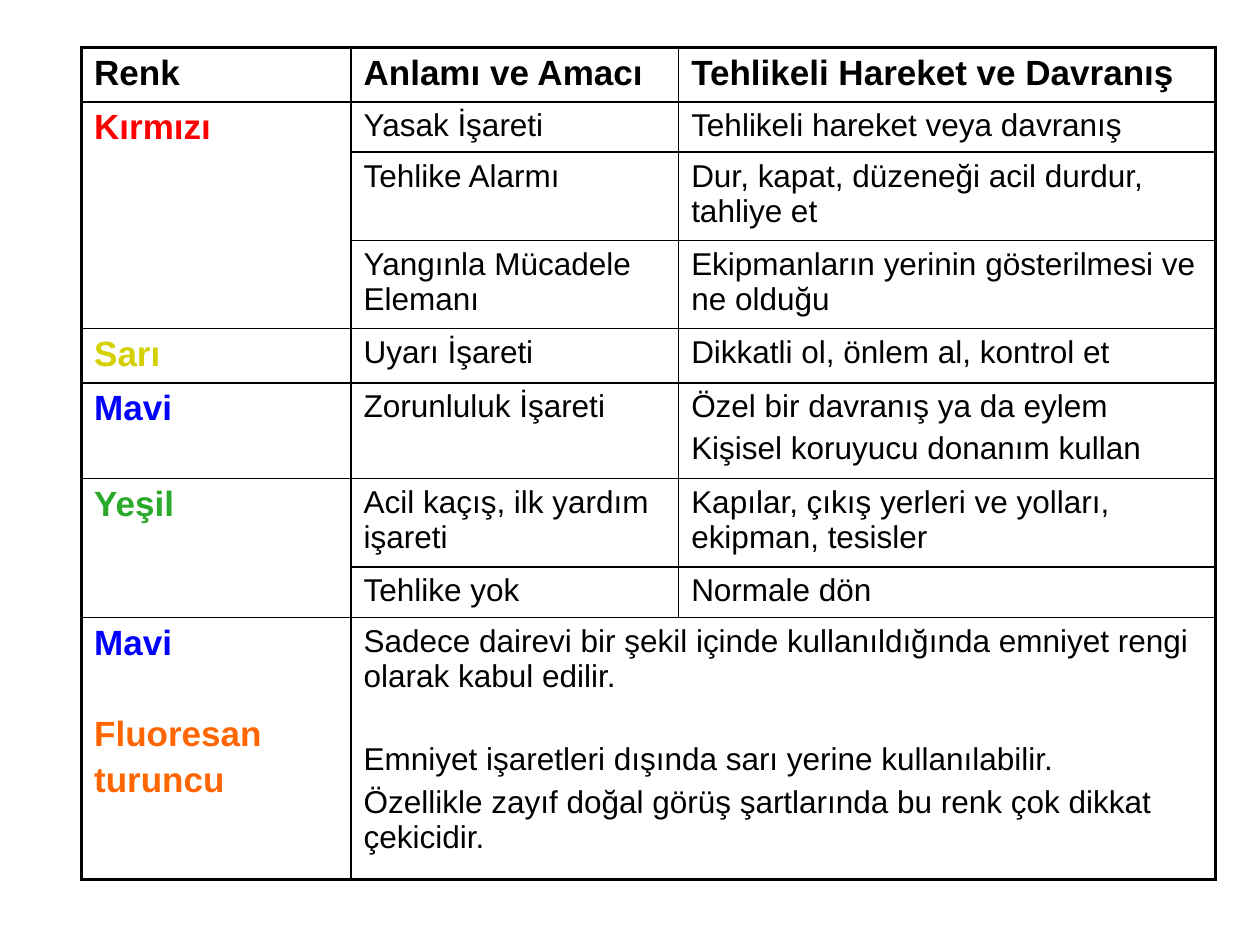
from dataclasses import dataclass

import lxml.etree
import pptx
import pptx.dml.color
import pptx.oxml.ns
import pptx.table
import pptx.util

Pt = pptx.util.Pt

BLACK, RED, YELLOW = "000000", "FF0000", "D5D000"
BLUE, GREEN, ORANGE = "0000FF", "2AAA2A", "FF6600"
HEADING = {"size": Pt(20), "bold": True, "name": "Arial"}
BODY = {"size": Pt(18), "bold": False, "name": "Arial"}
CELL_FORMAT = {
    "margin_left": Pt(7.2),
    "margin_right": Pt(7.2),
    "margin_top": Pt(3.6),
    "margin_bottom": Pt(3.6),
}
COLUMN_WIDTHS = [154, 187.25, 306.75]
ROW_HEIGHTS = [31, 28.8, 50.4, 50.4, 31, 54.8, 50.4, 28.8, 149.8]
OUTER_WIDTH, INNER_WIDTH = 2.25, 1


@dataclass
class Line:
    text: str
    color: str = BLACK
    space_before: float = 4


@dataclass
class Entry:
    row: int
    column: int
    lines: list[Line]
    row_span: int = 1
    column_span: int = 1


def body_entries(row: int, meaning: str, *actions: str) -> list[Entry]:
    return [
        Entry(row, 1, [Line(meaning)]),
        Entry(row, 2, [Line(action) for action in actions]),
    ]


ENTRIES = [
    Entry(0, 0, [Line("Renk")]),
    Entry(0, 1, [Line("Anlamı ve Amacı")]),
    Entry(0, 2, [Line("Tehlikeli Hareket ve Davranış")]),
    Entry(1, 0, [Line("Kırmızı", RED)], row_span=3),
    *body_entries(1, "Yasak İşareti", "Tehlikeli hareket veya davranış"),
    *body_entries(2, "Tehlike Alarmı", "Dur, kapat, düzeneği acil durdur, tahliye et"),
    *body_entries(
        3, "Yangınla Mücadele Elemanı", "Ekipmanların yerinin gösterilmesi ve ne olduğu"
    ),
    Entry(4, 0, [Line("Sarı", YELLOW)]),
    *body_entries(4, "Uyarı İşareti", "Dikkatli ol, önlem al, kontrol et"),
    Entry(5, 0, [Line("Mavi", BLUE)]),
    *body_entries(
        5,
        "Zorunluluk İşareti",
        "Özel bir davranış ya da eylem",
        "Kişisel koruyucu donanım kullan",
    ),
    Entry(6, 0, [Line("Yeşil", GREEN)], row_span=2),
    *body_entries(
        6, "Acil kaçış, ilk yardım işareti", "Kapılar, çıkış yerleri ve yolları, ekipman, tesisler"
    ),
    *body_entries(7, "Tehlike yok", "Normale dön"),
    Entry(8, 0, [Line("Mavi", BLUE), Line("Fluoresan", ORANGE, 30), Line("turuncu", ORANGE)]),
    Entry(
        8,
        1,
        [
            Line(
                "Sadece dairevi bir şekil içinde kullanıldığında emniyet rengi "
                "olarak kabul edilir."
            ),
            Line("Emniyet işaretleri dışında sarı yerine kullanılabilir.", space_before=27.5),
            Line("Özellikle zayıf doğal görüş şartlarında bu renk çok dikkat çekicidir."),
        ],
        column_span=2,
    ),
]


def color_of(value: str) -> pptx.dml.color.RGBColor:
    return pptx.dml.color.RGBColor.from_string(value)


def apply_format(target: object, values: dict) -> None:
    for name, value in values.items():
        setattr(target, name, value)


def write_entry(table: pptx.table.Table, entry: Entry) -> None:
    cell = table.cell(entry.row, entry.column)
    if entry.row_span * entry.column_span > 1:
        last_row = entry.row + entry.row_span - 1
        last_column = entry.column + entry.column_span - 1
        cell.merge(table.cell(last_row, last_column))
    text_format = HEADING if entry.row == 0 or entry.column == 0 else BODY
    for index, line in enumerate(entry.lines):
        frame = cell.text_frame
        paragraph = frame.add_paragraph() if index else frame.paragraphs[0]
        paragraph.space_before = Pt(line.space_before)
        run = paragraph.add_run()
        run.text = line.text
        apply_format(run.font, text_format)
        run.font.color.rgb = color_of(line.color)


def add_border(cell: pptx.table._Cell, side: str, position: int, width: float) -> None:
    qualified = pptx.oxml.ns.qn
    border = lxml.etree.Element(qualified(f"a:ln{side}"), w=str(int(Pt(width))))
    fill = lxml.etree.SubElement(border, qualified("a:solidFill"))
    lxml.etree.SubElement(fill, qualified("a:srgbClr"), val=BLACK)
    cell._tc.get_or_add_tcPr().insert(position, border)


def style_cell(table: pptx.table.Table, row: int, column: int) -> None:
    cell = table.cell(row, column)
    apply_format(cell, CELL_FORMAT)
    cell.fill.background()
    outer_edges = {
        "L": column == 0,
        "R": column + cell.span_width == len(COLUMN_WIDTHS),
        "T": row == 0,
        "B": row + cell.span_height == len(ROW_HEIGHTS),
    }
    drawn = [side for side in outer_edges if outer_edges[side] or not cell.is_spanned]
    for position, side in enumerate(drawn):
        add_border(cell, side, position, OUTER_WIDTH if outer_edges[side] else INNER_WIDTH)


def add_color_table(slide: pptx.slide.Slide) -> None:
    shape = slide.shapes.add_table(
        len(ROW_HEIGHTS),
        len(COLUMN_WIDTHS),
        Pt(46.6),
        Pt(27.2),
        Pt(sum(COLUMN_WIDTHS)),
        Pt(sum(ROW_HEIGHTS)),
    )
    table = shape.table
    apply_format(table, {"first_row": False, "horz_banding": False})
    for column, width in zip(table.columns, COLUMN_WIDTHS):
        column.width = Pt(width)
    for row, height in zip(table.rows, ROW_HEIGHTS):
        row.height = Pt(height)
    for entry in ENTRIES:
        write_entry(table, entry)
    for row in range(len(ROW_HEIGHTS)):
        for column in range(len(COLUMN_WIDTHS)):
            style_cell(table, row, column)


def main() -> None:
    presentation = pptx.Presentation()
    apply_format(presentation, {"slide_width": Pt(720), "slide_height": Pt(540)})
    slide = presentation.slides.add_slide(presentation.slide_layouts[6])
    add_color_table(slide)
    presentation.save("out.pptx")


if __name__ == "__main__":
    main()
